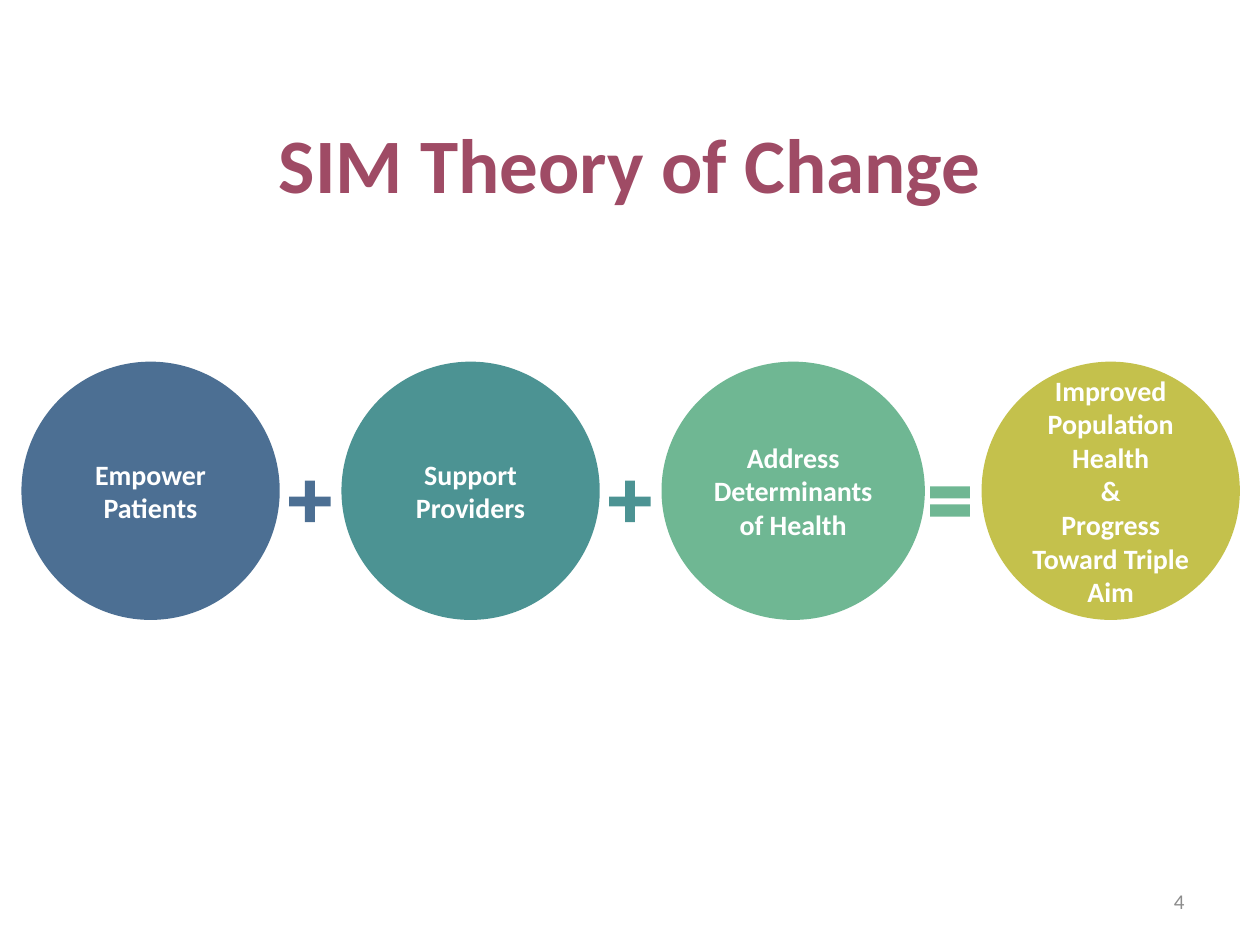
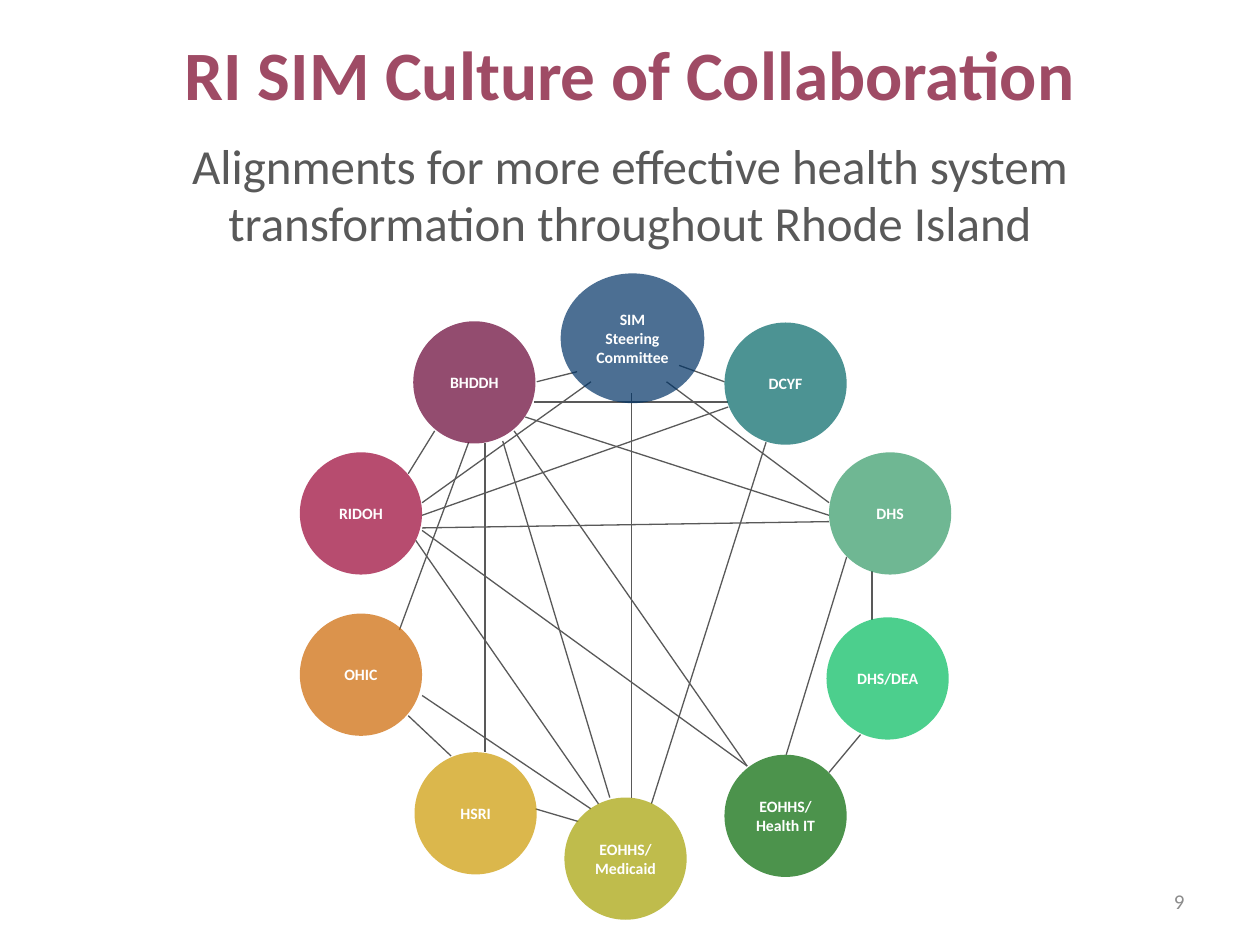
from dataclasses import dataclass

from lxml import etree
from pptx import Presentation
from pptx.dml.color import RGBColor
from pptx.enum import shapes, text
from pptx.oxml.ns import qn

PX = 9144  # EMU in one px, 100 px to the inch


@dataclass(frozen=True)
class Theme:
    font: str = "Calibri"
    title: str = "9F4B65"
    body: str = "595959"
    number: str = "8C8C8C"
    label: str = "FFFFFF"
    navy: str = "003366"
    teal: str = "006666"
    green: str = "339966"
    opacity: int = 70
    title_size: float = 44
    long_title_size: float = 39.6
    body_size: float = 28
    step_size: float = 16
    number_size: float = 12
    partner_size: float = 9
    line_width: float = 0.75


THEME = Theme()
OVAL = shapes.MSO_SHAPE.OVAL
CENTER, RIGHT = text.PP_ALIGN.CENTER, text.PP_ALIGN.RIGHT
TOP, MIDDLE = text.MSO_ANCHOR.TOP, text.MSO_ANCHOR.MIDDLE

# Slide 1: label paragraphs, colour, width
STEPS = [
    (["Empower Patients"], THEME.navy, 205),
    (["Support Providers"], THEME.teal, 205),
    (["Address Determinants of Health"], THEME.green, 209),
    (["Improved Population Health", "&", "Progress Toward Triple Aim"], "ACA800", 205),
]
# Operator after each step: shape, width, height
PLUS = (shapes.MSO_SHAPE.CROSS, 33, 33)
EQUALS = (shapes.MSO_SHAPE.MATH_EQUAL, 43, 41)
OPERATORS = [PLUS, PLUS, EQUALS]
PLUS_NOTCH = 0.382
STEP_LEFT, STEP_TOP, STEP_PITCH, STEP_HEIGHT = 17, 287, 254, 205
OPERATOR_X, OPERATOR_Y = 246, 398  # centre of the first operator

# Slide 2: label, colour, left, top, size
ROUND = (97, 97)
PARTNERS = [
    ("BHDDH", "660033", 328, 255, ROUND),
    ("RIDOH", "990033", 238, 359, ROUND),
    ("OHIC", "CC6600", 238, 487, ROUND),
    ("HSRI", "CC9900", 329, 597, ROUND),
    ("EOHHS/ Medicaid", "A4A000", 448, 633, ROUND),
    ("EOHHS/ Health IT", "006600", 575, 599, ROUND),
    ("DHS/DEA", "00BC5E", 656, 490, ROUND),
    ("SIM Steering Committee", THEME.navy, 445, 217, (114, 103)),
    ("DCYF", THEME.teal, 575, 256, ROUND),
    ("DHS", THEME.green, 658, 359, ROUND),
]
# Links by the partner they leave from: x and y of both ends
LINKS_BEHIND = {
    "SIM": [(539, 290, 575, 303), (529, 303, 658, 399), (501, 312, 501, 633)],
    "DCYF": [(608, 351, 517, 638), (578, 319, 424, 319)],
    "RIDOH": [(335, 399, 469, 303), (335, 409, 578, 323), (330, 429, 475, 638),
              (335, 419, 658, 414), (335, 421, 593, 608)],
    "OHIC": [(324, 568, 358, 600), (335, 552, 469, 642)],
    "HSRI": [(425, 642, 459, 652)],
    "BHDDH": [(399, 350, 484, 633), (345, 342, 324, 376), (426, 303, 458, 295),
              (417, 331, 658, 409), (372, 351, 317, 500), (385, 352, 385, 597),
              (408, 342, 593, 608)],
    "DHS": [(692, 453, 692, 492)],
}
LINKS_IN_FRONT = {
    "EOHHS/ Health IT": [(624, 599, 672, 442)],
    "DHS/DEA": [(683, 583, 658, 613)],
}


def place(box, left, top, width, height):
    box.left, box.top, box.width, box.height = (
        round(n * PX) for n in (left, top, width, height))


def write(box, lines, size, color, bold=False, align=CENTER, anchor=MIDDLE):
    frame = box.text_frame
    frame.word_wrap = True
    frame.auto_size = text.MSO_AUTO_SIZE.NONE
    frame.vertical_anchor = anchor
    frame.text = "\n".join(lines)
    for para in frame.paragraphs:
        para.alignment = align
        font = para.font
        font.name, font.bold = THEME.font, bold
        font.size = round(size * 12700)
        font.color.rgb = RGBColor.from_string(color)
    return frame


def add_filled(page, kind, left, top, width, height, color):
    box = page.shapes.add_shape(kind, 0, 0, 0, 0)
    place(box, left, top, width, height)
    box.shadow.inherit = False
    box.line.fill.background()
    box.fill.solid()
    box.fill.fore_color.rgb = RGBColor.from_string(color)
    tint = box._element.spPr.find(qn("a:solidFill")).find(qn("a:srgbClr"))
    etree.SubElement(tint, qn("a:alpha"), val=str(THEME.opacity * 1000))
    return box


def add_circle(page, lines, size, color, *area):
    frame = write(add_filled(page, OVAL, *area, color), lines, size, THEME.label, bold=True)
    frame.margin_left = frame.margin_right = 8 * PX
    frame.margin_top = frame.margin_bottom = 0


def add_links(page, links):
    for ends in links.values():
        for points in ends:
            link = page.shapes.add_connector(
                shapes.MSO_CONNECTOR.STRAIGHT, *(n * PX for n in points))
            link.line.color.rgb = RGBColor.from_string(THEME.body)
            link.line.width = round(THEME.line_width * 12700)
            etree.SubElement(link._element.spPr, qn("a:effectLst"))


def add_page(deck, layout, title, size, top, anchor, number):
    page = deck.slides.add_slide(deck.slide_layouts[layout])
    heading = page.shapes.title
    place(heading, 50, top, 900, 125)
    frame = write(heading, [title], size, THEME.title, bold=True, anchor=anchor)
    if anchor == TOP:
        frame.margin_top = 0
    box = page.shapes.add_textbox(0, 0, 0, 0)
    place(box, 717, 695, 233, 40)
    write(box, [number], THEME.number_size, THEME.number, align=RIGHT)
    return page


def build_theory(deck):
    page = add_page(deck, 5, "SIM Theory of Change", THEME.title_size, 67, MIDDLE, "4")
    for i, (lines, color, width) in enumerate(STEPS):
        add_circle(page, lines, THEME.step_size, color,
                   STEP_LEFT + i * STEP_PITCH, STEP_TOP, width, STEP_HEIGHT)
    # Operators sit midway between neighbouring circles
    for i, (kind, width, height) in enumerate(OPERATORS):
        center = OPERATOR_X + i * STEP_PITCH
        sign = add_filled(page, kind, center - width / 2, OPERATOR_Y - height / 2,
                          width, height, STEPS[i][1])
        if kind == shapes.MSO_SHAPE.CROSS:
            sign.adjustments[0] = PLUS_NOTCH


def build_collaboration(deck):
    page = add_page(deck, 1, "RI SIM Culture of Collaboration",
                    THEME.long_title_size, 25, TOP, "9")
    # Subtitle without a bullet
    body = page.placeholders[1]
    place(body, 25, 105, 950, 131)
    frame = write(body, ["Alignments for more effective health system "
                         "transformation throughout Rhode Island"],
                  THEME.body_size, THEME.body, anchor=TOP)
    frame.margin_left = frame.margin_right = 20 * PX
    para = frame.paragraphs[0]
    para.line_spacing = 0.97
    props = para._p.get_or_add_pPr()
    props.set("marL", "0")
    props.set("indent", "0")
    props.find(qn("a:lnSpc")).addnext(etree.Element(qn("a:buNone")))
    # Network of partners
    add_links(page, LINKS_BEHIND)
    for label, color, left, top, size in PARTNERS:
        add_circle(page, [label], THEME.partner_size, color, left, top, *size)
    add_links(page, LINKS_IN_FRONT)


def main():
    deck = Presentation()
    deck.slide_width, deck.slide_height = 1000 * PX, 750 * PX
    build_theory(deck)
    build_collaboration(deck)
    deck.save("out.pptx")


if __name__ == "__main__":
    main()
